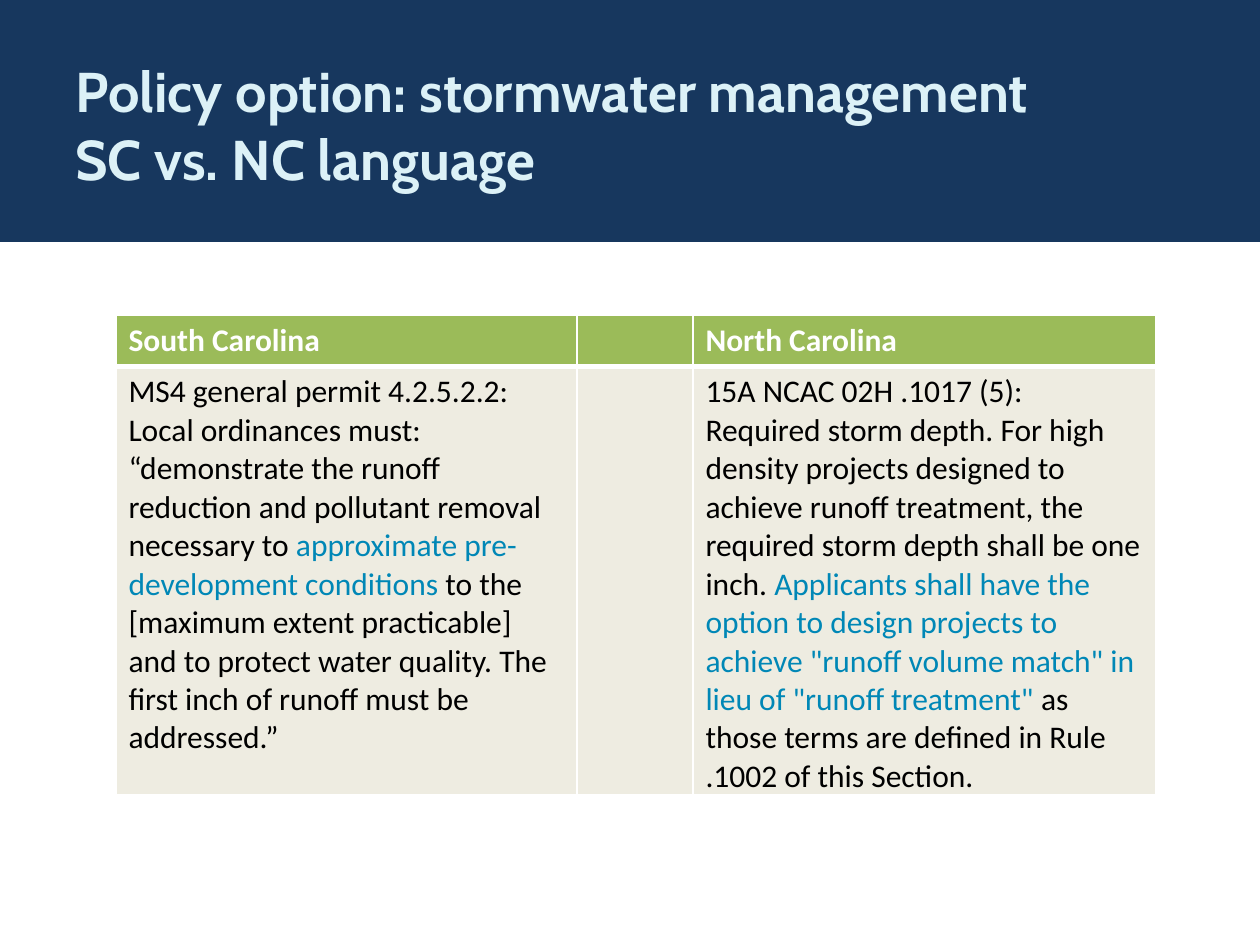
from lxml import etree
from pptx import Presentation
from pptx.dml.color import RGBColor
from pptx.enum import shapes, text
from pptx.oxml.ns import qn
from pptx.util import Inches, Pt

WHITE, BLACK, ACCENT = "FFFFFF", "000000", "0087B6"


def rgb(value):
    return RGBColor.from_string(value)


def add_borders(cell, widths):
    """Put white lines on a cell; widths in points for left, right, top, bottom."""
    properties = cell._tc.get_or_add_tcPr()
    for position, (side, width) in enumerate(zip("LRTB", widths)):
        line = etree.Element(qn(f"a:ln{side}"), w=str(Pt(width)))
        fill = etree.SubElement(line, qn("a:solidFill"))
        etree.SubElement(fill, qn("a:srgbClr"), val=WHITE)
        properties.insert(position, line)


prs = Presentation()
prs.slide_width, prs.slide_height = Inches(10), Inches(7.5)
slide = prs.slides.add_slide(prs.slide_layouts[6])

# Header band
band = slide.shapes.add_shape(shapes.MSO_SHAPE.RECTANGLE, 0, 0, Inches(10), Inches(1.92))
band.shadow.inherit = False
band.fill.solid()
band.fill.fore_color.rgb = rgb("17375E")
band.line.fill.background()

# Title
title = slide.shapes.add_textbox(Inches(0.5), Inches(0.3), Inches(9), Inches(1.37)).text_frame
title.word_wrap = True
title.vertical_anchor = text.MSO_ANCHOR.MIDDLE
heading = title.paragraphs[0]
heading.text = "Policy option: stormwater management \vSC vs. NC language"
heading.font.name = "Cabin"
heading.font.size = Pt(32)
heading.font.bold = True
heading.font.color.rgb = rgb("DCF1F7")

# Comparison: each cell is a list of paragraphs, each paragraph a list of (text, colour)
south_carolina = [
    [("MS4 general permit 4.2.5.2.2:", BLACK)],
    [("Local ordinances must:", BLACK)],
    [("“demonstrate the runoff reduction and pollutant removal necessary to ", BLACK),
     ("approximate pre-development conditions", ACCENT),
     (" to the [maximum extent practicable] and to protect water quality. "
      "The first inch of runoff must be addressed.”", BLACK)],
]
north_carolina = [
    [("15A NCAC 02H .1017 (5):", BLACK)],
    [("Required storm depth. For high density projects designed to achieve runoff "
      "treatment, the required storm depth shall be one inch. ", BLACK),
     ("Applicants shall have the option to design projects to achieve "
      '"runoff volume match" in lieu of "runoff treatment" ', ACCENT),
     ("as those terms are defined in Rule .1002 of this Section.", BLACK)],
]
# Row fill, bold, border widths, cells
rows = [
    ("9BBB59", True, (1, 1, 1, 3),
     [[[("South Carolina", WHITE)]], [], [[("North Carolina", WHITE)]]]),
    ("EEECE1", False, (1, 1, 3, 1), [south_carolina, [], north_carolina]),
]

table = slide.shapes.add_table(2, 3, Inches(0.92), Inches(2.5), Inches(8.25), Inches(3.81)).table
for column, width in zip(table.columns, (3.66, 0.92, 3.67)):
    column.width = Inches(width)
for row, height in zip(table.rows, (0.41, 3.4)):
    row.height = Inches(height)

for r, (row_fill, bold, borders, contents) in enumerate(rows):
    for c, paragraphs in enumerate(contents):
        cell = table.cell(r, c)
        cell.fill.solid()
        cell.fill.fore_color.rgb = rgb(row_fill)
        add_borders(cell, borders)
        for i, pieces in enumerate(paragraphs):
            frame = cell.text_frame
            paragraph = frame.add_paragraph() if i else frame.paragraphs[0]
            paragraph.font.name = "Calibri"
            paragraph.font.size = Pt(18)
            for words, color in pieces:
                run = paragraph.add_run()
                run.text = words
                run.font.bold = bold
                run.font.color.rgb = rgb(color)

prs.save("out.pptx")
